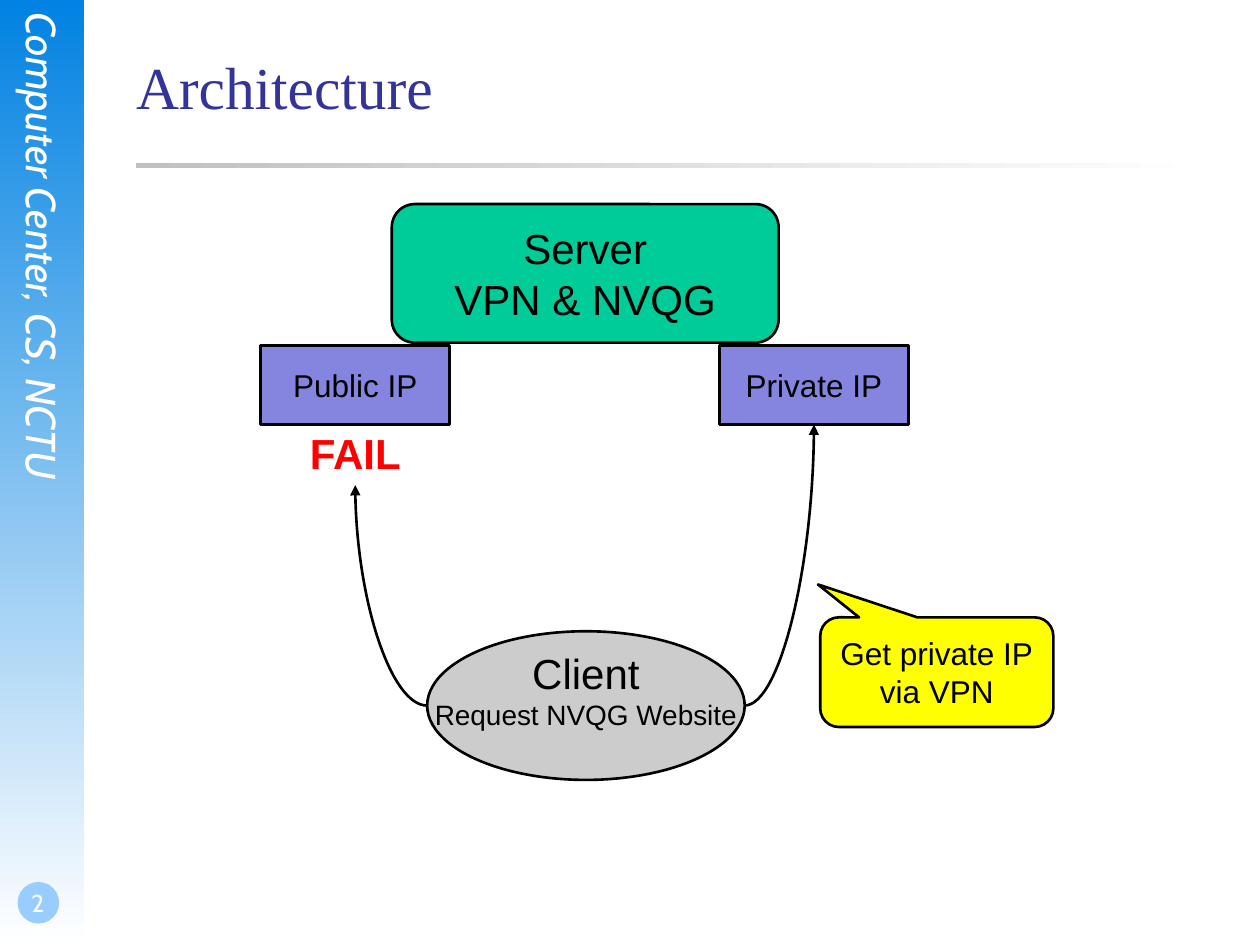
from dataclasses import dataclass
from lxml import etree
from pptx import Presentation
from pptx import util as u
from pptx.dml import color
from pptx.enum import shapes, text
from pptx.oxml import ns

KIND = shapes.MSO_SHAPE
ALIGN = text.PP_ALIGN
ANCHOR = text.MSO_ANCHOR


@dataclass(frozen=True)
class Theme:
    sans: str = "Arial"
    serif: str = "Times New Roman"
    side: str = "Cabin"
    black: str = "000000"
    white: str = "FFFFFF"
    blue: str = "0282E2"
    badge: str = "99CCFF"
    rule: str = "C0C0C0"
    title: str = "333399"
    server: str = "00CC99"
    port: str = "8585E0"
    client: str = "CCCCCC"
    note: str = "FFFF00"
    fail: str = "FF0000"
    head: int = 34
    big: int = 24
    mid: int = 18
    small: int = 16
    page: int = 14
    line: float = 1.5


T = Theme()


def rgb(code):
    return color.RGBColor.from_string(code)


def write(shape, lines, sizes, tint=T.black, face=T.sans, align=ALIGN.CENTER,
          bold=False, slant=False):
    frame = shape.text_frame
    frame.text = "\n".join(lines)
    for para, size in zip(frame.paragraphs, sizes):
        para.alignment = align
        for run in para.runs:
            font = run.font
            font.name, font.size = face, u.Pt(size)
            font.bold, font.italic = bold, slant
            font.color.rgb = rgb(tint)
    return frame


def inset(frame, left=0, top=0, right=0, bottom=0):
    frame.margin_left, frame.margin_top = u.Inches(left), u.Inches(top)
    frame.margin_right, frame.margin_bottom = u.Inches(right), u.Inches(bottom)


def label(slide, box, line, size, **style):
    shape = slide.shapes.add_textbox(*map(u.Inches, box))
    frame = write(shape, [line], [size], **style)
    frame.word_wrap = True
    return frame


def plain(slide, kind, box, tint):
    shape = slide.shapes.add_shape(kind, *map(u.Inches, box))
    shape.shadow.inherit = False
    shape.line.fill.background()
    shape.fill.solid()
    shape.fill.fore_color.rgb = rgb(tint)
    return shape


def fade(shape, start, angle):
    shape.fill.gradient()
    shape.fill.gradient_angle = angle
    for stop, tint, place in zip(shape.fill.gradient_stops, (start, T.white), (0, 1)):
        stop.color.rgb = rgb(tint)
        stop.position = place


def node(slide, kind, box, tint, lines, sizes):
    shape = plain(slide, kind, box, tint)
    shape.line.color.rgb = rgb(T.black)
    shape.line.width = u.Pt(T.line)
    frame = write(shape, lines, sizes)
    frame.word_wrap = False
    frame.vertical_anchor = ANCHOR.MIDDLE
    return shape


def curve(slide, start, end):
    link = slide.shapes.add_connector(
        shapes.MSO_CONNECTOR.CURVE, *map(u.Inches, start + end))
    link.line.color.rgb = rgb(T.black)
    link.line.width = u.Pt(T.line)
    props = link._element.spPr
    props.find(ns.qn("a:prstGeom")).set("prst", "curvedConnector2")
    etree.SubElement(props.find(ns.qn("a:ln")), ns.qn("a:tailEnd"), type="triangle")
    etree.SubElement(props, ns.qn("a:effectLst"))


def sidebar(slide, box):
    left, top, width, height = box
    fade(plain(slide, KIND.RECTANGLE, box, T.blue), T.blue, 270)
    name = label(slide, (left + 0.14, top + 0.1, 0.4, 5.11),
                 "Computer Center, CS, NCTU", T.big, tint=T.white,
                 face=T.side, align=ALIGN.LEFT, slant=True)
    inset(name)
    name._txBody.bodyPr.set("vert", "eaVert")
    base = top + height
    plain(slide, KIND.OVAL, (left + 0.14, base - 0.5, 0.33, 0.33), T.badge)
    page = label(slide, (left, base - 0.67, 0.58, 0.5), "2", T.page,
                 tint=T.white, face=T.side)
    inset(page, left=0.02, bottom=0.05)
    page.vertical_anchor = ANCHOR.BOTTOM


def header(slide, box):
    left, top, width, height = box
    rule = plain(slide, KIND.RECTANGLE, (left, top + height - 0.04, width, 0.04), T.rule)
    fade(rule, T.rule, 0)
    title = label(slide, (left, top, width, 1.1), "Architecture", T.head,
                  tint=T.title, face=T.serif, align=ALIGN.LEFT)
    inset(title)
    title.vertical_anchor = ANCHOR.MIDDLE


def diagram(slide, box):
    left, top, width, height = box
    node(slide, KIND.ROUNDED_RECTANGLE, (left + 1.04, top, 3.07, 1.1), T.server,
         ["Server", "VPN & NVQG"], [T.big] * 2)
    row, wide, tall = top + 1.12, 1.5, 0.63
    ports = []
    for side, name in ((left, "Public IP"), (left + 3.64, "Private IP")):
        node(slide, KIND.RECTANGLE, (side, row, wide, tall), T.port, [name], [T.mid])
        ports.append(side + wide / 2)
    public, private = ports

    oval = (left + 1.32, top + height - 1.18, 2.52, 1.18)
    client = node(slide, KIND.OVAL, oval, T.client,
                  ["Client", "Request NVQG Website"], [T.big, T.small])
    client.text_frame.margin_bottom = u.Inches(0.31)
    mid = oval[1] + oval[3] / 2
    curve(slide, (oval[0], mid), (public, row + 1.11))
    curve(slide, (oval[0] + oval[2], mid), (private, row + tall))

    label(slide, (public - 0.55, row + 0.6, 1.1, 0.5), "FAIL", T.big,
          tint=T.fail, bold=True)
    note = node(slide, KIND.ROUNDED_RECTANGULAR_CALLOUT,
                (left + width - 1.85, top + 3.28, 1.85, 0.87), T.note,
                ["Get private IP", "via VPN"], [T.mid] * 2)
    for spot, value in enumerate((-0.51, -0.8, 0.17)):
        note.adjustments[spot] = value


def main():
    deck = Presentation()
    deck.slide_width, deck.slide_height = u.Inches(10), u.Inches(7.5)
    slide = deck.slides.add_slide(deck.slide_layouts[6])
    sidebar(slide, (0, 0, 0.67, 7.5))
    header(slide, (1.08, 0.13, 8.5, 1.2))
    diagram(slide, (2.07, 1.62, 6.29, 4.57))
    deck.save("out.pptx")


if __name__ == "__main__":
    main()
